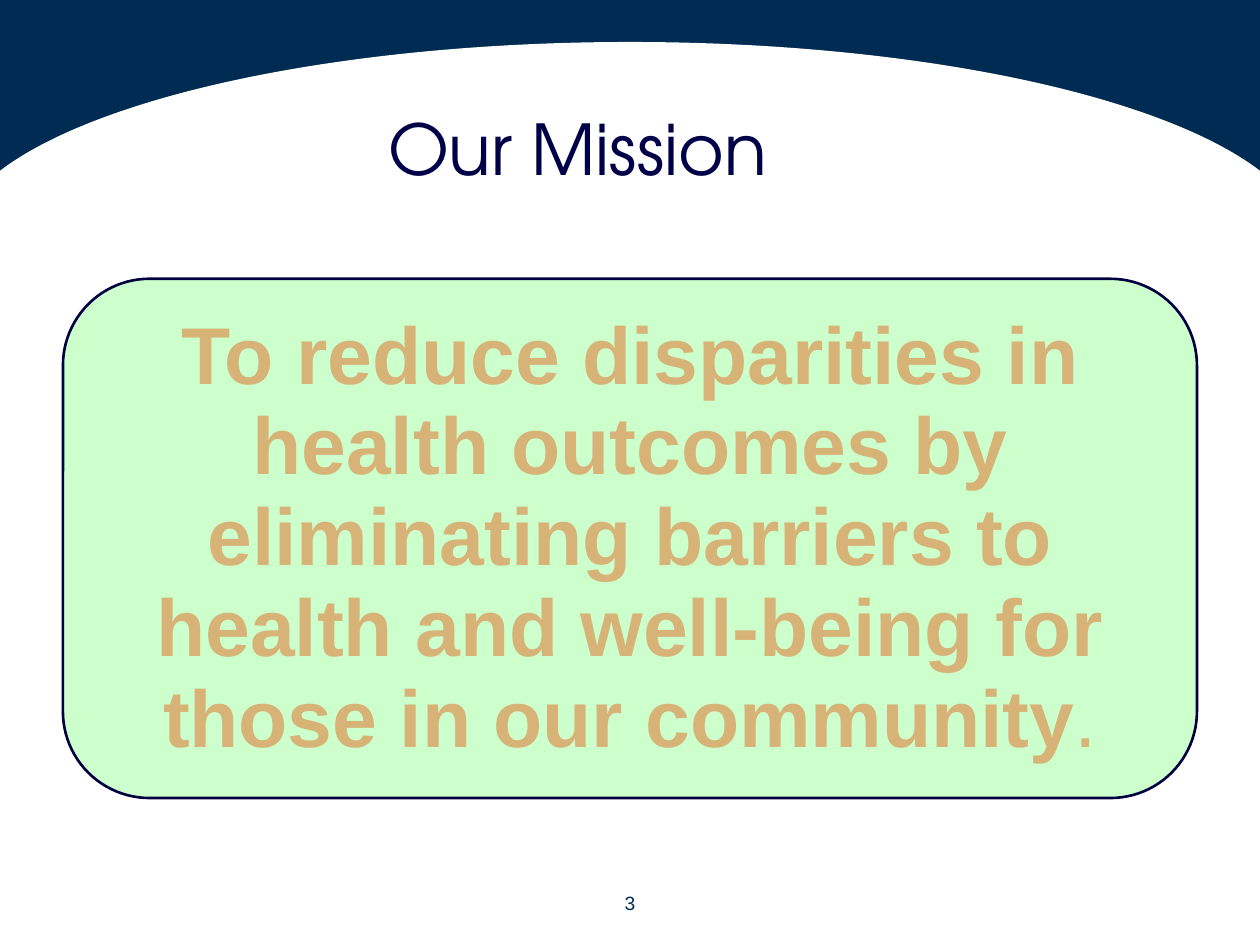
from typing import NamedTuple

from pptx import Presentation
from pptx.dml.color import RGBColor
from pptx.enum.shapes import MSO_SHAPE
from pptx.enum.text import MSO_ANCHOR, PP_ALIGN
from pptx.util import Pt

RECTANGLE = MSO_SHAPE.RECTANGLE
OVAL = MSO_SHAPE.OVAL
ROUNDED = MSO_SHAPE.ROUNDED_RECTANGLE
MIDDLE = MSO_ANCHOR.MIDDLE
CENTER = PP_ALIGN.CENTER

COLORS = {
    "band": "002B53",
    "white": "FFFFFF",
    "panel": "CCFFCC",
    "outline": "000041",
    "title": "000048",
    "mission": "D7B377",
}


class Box(NamedTuple):
    left: float
    top: float
    width: float
    height: float


class TextStyle(NamedTuple):
    font: str
    size: float
    color: str
    inset: float = 0
    line_spacing: float = 1.0


def rgb(name: str) -> RGBColor:
    return RGBColor.from_string(COLORS[name])


def add_panel(slide, kind, box: Box, fill: str, outline: str | None = None):
    shape = slide.shapes.add_shape(kind, *(Pt(value) for value in box))
    shape.shadow.inherit = False
    shape.fill.solid()
    shape.fill.fore_color.rgb = rgb(fill)
    if outline:
        shape.line.color.rgb = rgb(outline)
        shape.line.width = Pt(1.5)
    else:
        shape.line.fill.background()
    return shape


def add_text(slide, box: Box, text: str, style: TextStyle):
    """Add a centred text box and return its paragraph."""
    shape = slide.shapes.add_textbox(*(Pt(value) for value in box))
    frame = shape.text_frame
    frame.word_wrap = True
    frame.vertical_anchor = MIDDLE
    frame.margin_left = frame.margin_right = Pt(style.inset)
    frame.margin_top = frame.margin_bottom = Pt(style.inset)
    paragraph = frame.paragraphs[0]
    paragraph.alignment = CENTER
    paragraph.line_spacing = style.line_spacing
    paragraph.font.name = style.font
    paragraph.font.size = Pt(style.size)
    paragraph.font.color.rgb = rgb(style.color)
    paragraph.add_run().text = text
    return paragraph


def main() -> None:
    presentation = Presentation()
    presentation.slide_width = Pt(720)
    presentation.slide_height = Pt(540)
    slide = presentation.slides.add_slide(presentation.slide_layouts[6])

    # Curved header: a dark band cut by a white ellipse
    add_panel(slide, RECTANGLE, Box(0, 0, 720, 108), "band")
    add_panel(slide, OVAL, Box(-27, 24, 774, 232.5), "white")

    # Page number
    add_text(slide, Box(336.6, 505.5, 46.8, 21), "3", TextStyle("Arial", 11, "band"))

    # Mission statement
    add_panel(slide, ROUNDED, Box(36, 159.3, 648, 296.7), "panel", "outline")
    mission = add_text(
        slide,
        Box(50.4, 173.7, 619.2, 267.9),
        "To reduce disparities in health outcomes by eliminating barriers "
        "to health and well-being for those in our community",
        TextStyle("Arial", 46, "mission", inset=13.5, line_spacing=0.94),
    )
    mission.runs[0].font.bold = True
    mission.add_run().text = "."

    # Title
    add_text(slide, Box(6, 42, 648, 84), "Our Mission",
             TextStyle("TeX Gyre Adventor", 40, "title"))

    presentation.save("out.pptx")


if __name__ == "__main__":
    main()
